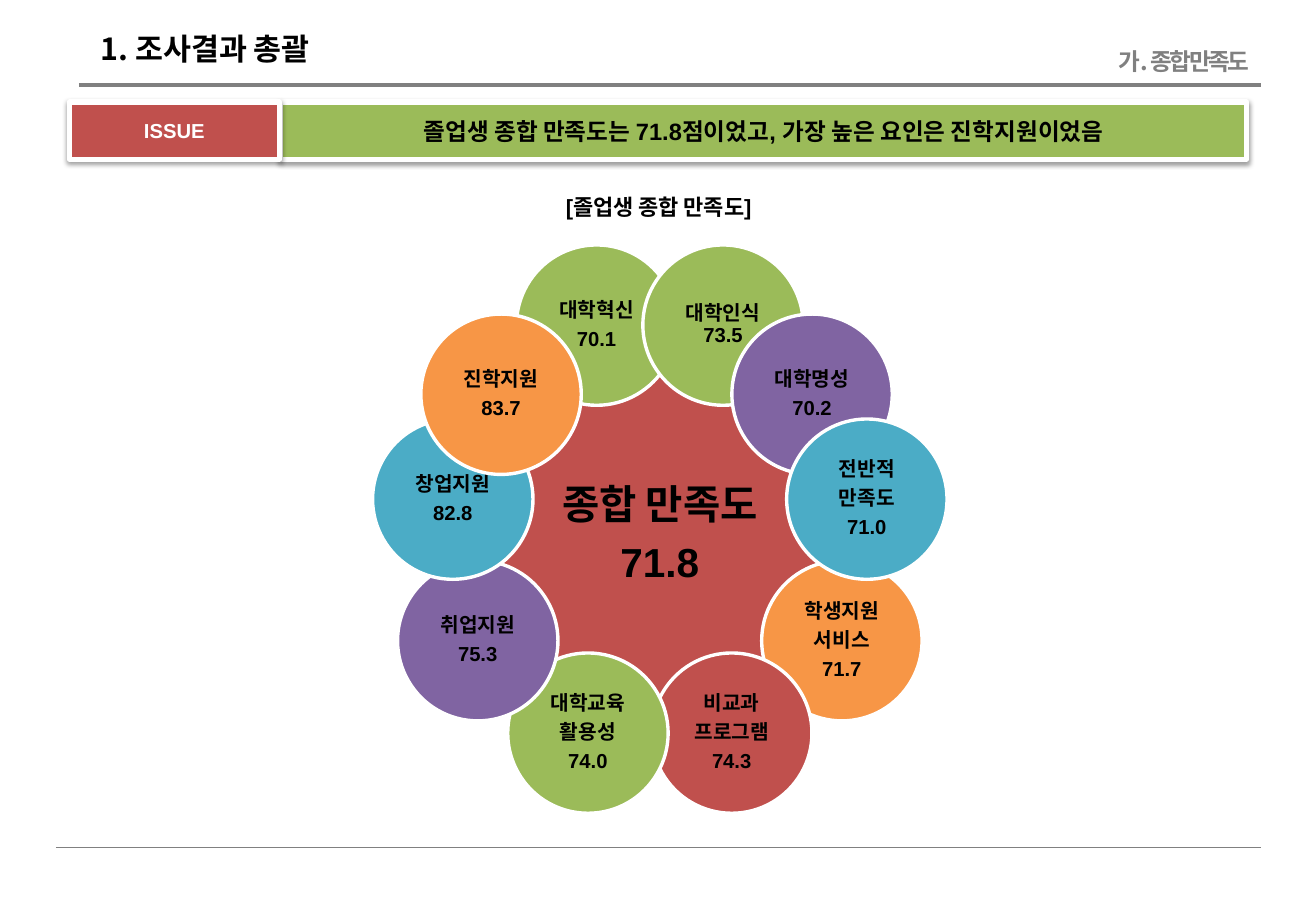
from dataclasses import dataclass
from math import cos, radians, sin

from lxml.etree import SubElement
from pptx import Presentation
from pptx.dml.color import RGBColor
from pptx.enum.shapes import MSO_CONNECTOR, MSO_SHAPE
from pptx.enum.text import MSO_ANCHOR, PP_ALIGN
from pptx.oxml.ns import qn
from pptx.util import Inches, Pt


@dataclass(frozen=True)
class Theme:
    black: str = "000000"
    white: str = "FFFFFF"
    gray: str = "808080"
    red: str = "C0504D"
    green: str = "9BBB59"
    purple: str = "8064A2"
    teal: str = "4BACC6"
    orange: str = "F79646"
    latin: str = "Arial"
    korean: str = "Noto Sans CJK KR"
    title: int = 18
    heading: int = 14
    caption: int = 13
    label: int = 12
    center: int = 24


THEME = Theme()
CENTER = (5.43, 4.41)
CENTER_SIZE = 2.65
PETAL_SIZE = 1.32

# Petals from back to front: lines, colour, clockwise angle from the top, distance
PETALS = [
    (["대학혁신", "70.1"], THEME.green, -16.7, 1.81),
    (["학생지원", "서비스", "71.7"], THEME.orange, 120, 1.73),
    (["비교과", "프로그램", "74.3"], THEME.red, 160, 1.73),
    (["대학교육", "활용성", "74.0"], THEME.green, 200, 1.73),
    (["취업지원", "75.3"], THEME.purple, 240, 1.73),
    (["창업지원", "82.8"], THEME.teal, 280, 1.73),
    (["진학지원", "83.7"], THEME.orange, -48.3, 1.75),
    (["대학인식\v73.5"], THEME.green, 16.7, 1.81),
    (["대학명성", "70.2"], THEME.purple, 47.1, 1.71),
    (["전반적", "만족도", "71.0"], THEME.teal, 80, 1.73),
]


class SlideBuilder:
    def __init__(self, page, theme):
        self.page = page
        self.theme = theme

    def add_lines(self, shape, lines, size, color, align=PP_ALIGN.CENTER,
                  latin=None, tracking=None, inset=None, **spacing):
        frame = shape.text_frame
        frame.word_wrap = True
        if inset is not None:
            for side in ("left", "right", "top", "bottom"):
                setattr(frame, f"margin_{side}", Inches(inset))
        for index, line in enumerate(lines):
            para = frame.paragraphs[0] if index == 0 else frame.add_paragraph()
            para.text = line
            for name, value in {"alignment": align, **spacing}.items():
                setattr(para, name, value)
            for span in para.runs:
                font_values = {"name": latin or self.theme.latin,
                               "size": Pt(size), "bold": True}
                for name, value in font_values.items():
                    setattr(span.font, name, value)
                span.font.color.rgb = RGBColor.from_string(color)
                properties = span._r.get_or_add_rPr()
                SubElement(properties, qn("a:ea"), typeface=self.theme.korean)
                if tracking is not None:
                    properties.set("spc", str(int(tracking * 100)))

    def text(self, left, top, width, height, line, size, color, **style):
        box = self.page.shapes.add_textbox(
            Inches(left), Inches(top), Inches(width), Inches(height))
        self.add_lines(box, [line], size, color, **style)

    def rule(self, left, right, y, weight):
        line = self.page.shapes.add_connector(
            MSO_CONNECTOR.STRAIGHT, Inches(left), Inches(y), Inches(right), Inches(y))
        line.line.color.rgb = RGBColor.from_string(self.theme.gray)
        line.line.width = Pt(weight)
        SubElement(line._element.spPr, qn("a:effectLst"))

    def filled(self, kind, left, top, width, height, fill, outline):
        shape = self.page.shapes.add_shape(
            kind, Inches(left), Inches(top), Inches(width), Inches(height))
        shape.shadow.inherit = False
        shape.fill.solid()
        shape.fill.fore_color.rgb = RGBColor.from_string(fill)
        shape.line.color.rgb = RGBColor.from_string(self.theme.white)
        shape.line.width = Pt(outline)
        shape.text_frame.vertical_anchor = MSO_ANCHOR.MIDDLE
        return shape

    def banner(self, left, width, fill, line, size, color):
        bar = self.filled(MSO_SHAPE.RECTANGLE, left, 0.84, width, 0.47, fill, 3)
        effects = bar._element.spPr.find(qn("a:effectLst"))
        shadow = SubElement(effects, qn("a:outerShdw"), blurRad=str(Pt(3.1)),
                            dist=str(Pt(1.6)), dir="5400000", rotWithShape="0")
        tint = SubElement(shadow, qn("a:srgbClr"), val=self.theme.black)
        SubElement(tint, qn("a:alpha"), val="38000")
        self.add_lines(bar, [line], size, color)

    def circle(self, x, y, diameter, fill, lines, size):
        disc = self.filled(MSO_SHAPE.OVAL, x - diameter / 2, y - diameter / 2,
                           diameter, diameter, fill, 2)
        self.add_lines(disc, lines, size, self.theme.black, inset=0.02,
                       line_spacing=0.9, space_after=Pt(size * 0.35))


def main():
    deck = Presentation()
    deck.slide_width = Inches(10.83)
    deck.slide_height = Inches(7.5)
    page = deck.slides.add_slide(deck.slide_layouts[6])
    builder = SlideBuilder(page, THEME)

    # Header and footer rules
    builder.rule(0.65, 10.38, 0.7, 2)
    builder.rule(0.46, 10.38, 6.98, 0.5)

    # Titles
    builder.text(0.73, 0.2, 2.44, 0.4, "1. 조사결과 총괄", THEME.title, THEME.black,
                 align=PP_ALIGN.LEFT, latin=THEME.korean)
    builder.text(8.37, 0.34, 2.01, 0.34, "가. 종합만족도", THEME.heading, THEME.gray,
                 align=PP_ALIGN.RIGHT, latin=THEME.korean, tracking=-1.5)

    # Issue banner
    builder.banner(2.31, 7.95, THEME.green,
                   "졸업생 종합 만족도는 71.8점이었고, 가장 높은 요인은 진학지원이었음",
                   THEME.heading, THEME.black)
    builder.banner(0.57, 1.73, THEME.red, "ISSUE", THEME.label, THEME.white)

    # Satisfaction flower
    builder.text(3.06, 1.54, 4.72, 0.32, "[졸업생 종합 만족도]", THEME.caption, THEME.black)
    center_x, center_y = CENTER
    builder.circle(center_x, center_y, CENTER_SIZE, THEME.red,
                   ["종합 만족도", "71.8"], THEME.center)
    for lines, color, angle, distance in PETALS:
        turn = radians(angle)
        builder.circle(center_x + distance * sin(turn), center_y - distance * cos(turn),
                       PETAL_SIZE, color, lines, THEME.label)

    deck.save("out.pptx")


if __name__ == "__main__":
    main()
